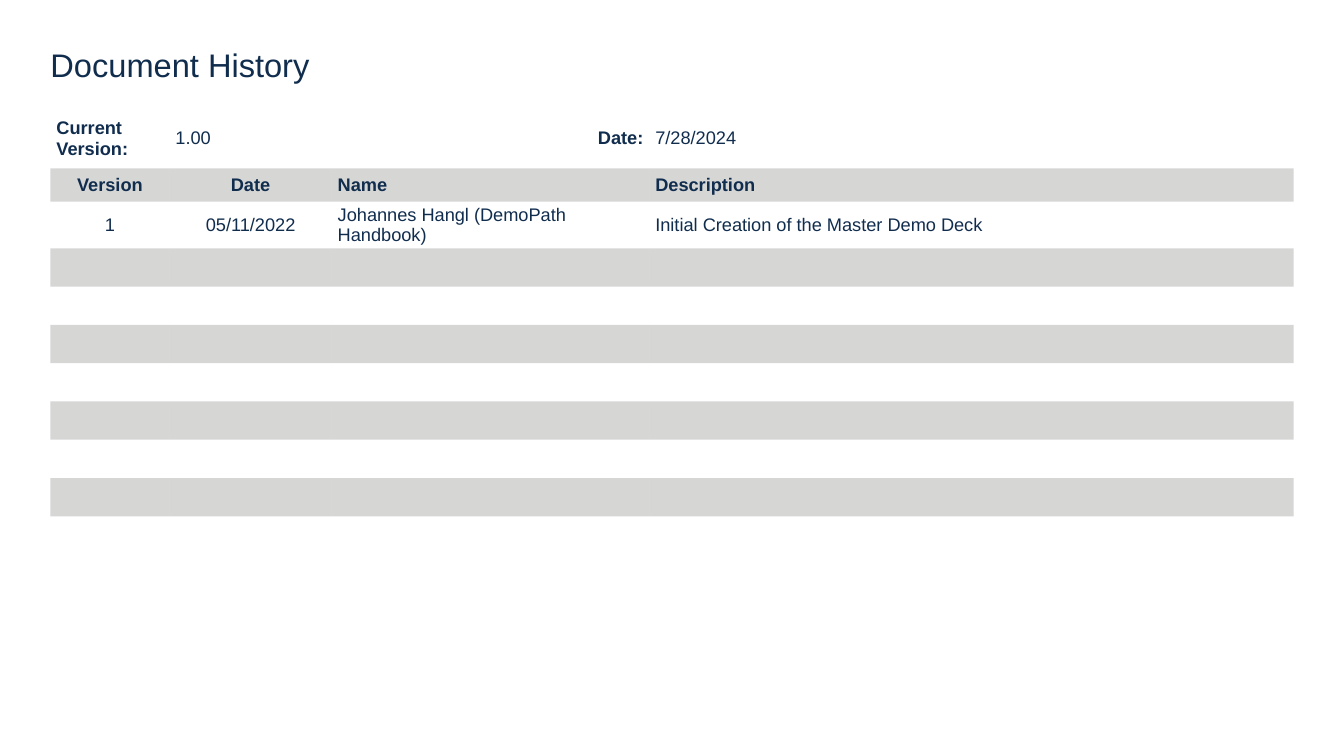
from lxml.etree import SubElement
from pptx import Presentation
from pptx.dml.color import RGBColor
from pptx.enum.text import MSO_ANCHOR, PP_ALIGN
from pptx.oxml.ns import qn
from pptx.util import Inches, Pt

COLORS = {"text": "112D4E", "band": "353231"}
FONT = "Arial"
NO_STYLE = "{2D5ABB26-0587-4C30-8999-92F81FD0307C}"
BAND_OPACITY = 20
COLUMN_WIDTHS = [1.18, 1.61, 3.15, 6.39]
ROW_HEIGHTS = [0.59, 0.33] + [0.38] * 10
BANDED_ROWS = range(1, 10, 2)
LEFT, CENTER, RIGHT = PP_ALIGN.LEFT, PP_ALIGN.CENTER, PP_ALIGN.RIGHT
HISTORY = [
    [("Current Version:", LEFT, True), ("1.00", LEFT, False),
     ("Date:", RIGHT, True), ("7/28/2024", LEFT, False)],
    [("Version", CENTER, True), ("Date", CENTER, True),
     ("Name", LEFT, True), ("Description", LEFT, True)],
    [("1", CENTER, False), ("05/11/2022", CENTER, False),
     ("Johannes Hangl (DemoPath Handbook)", LEFT, False),
     ("Initial Creation of the Master Demo Deck", LEFT, False)],
]


def add_run(p, text, size, bold=False):
    r = p.add_run()
    r.text = text
    r.font.name = FONT
    r.font.size = Pt(size)
    r.font.bold = bold
    r.font.color.rgb = RGBColor.from_string(COLORS["text"])


def add_title(slide, text, left, top, width, height):
    sp = slide.shapes.title
    sp.left, sp.top = Inches(left), Inches(top)
    sp.width, sp.height = Inches(width), Inches(height)
    tf = sp.text_frame
    tf.word_wrap = True
    tf.vertical_anchor = MSO_ANCHOR.MIDDLE
    tf.margin_left = tf.margin_right = tf.margin_top = 0
    tf.margin_bottom = Inches(0.5)
    p = tf.paragraphs[0]
    p.alignment = LEFT
    p.line_spacing = 0.9
    add_run(p, text, 23.3)


def fill_band(cell):
    cell.fill.solid()
    cell.fill.fore_color.rgb = RGBColor.from_string(COLORS["band"])
    color = cell._tc.tcPr.find(".//" + qn("a:srgbClr"))
    SubElement(color, qn("a:alpha")).set("val", str(BAND_OPACITY * 1000))


def format_cell(cell, banded):
    cell.vertical_anchor = MSO_ANCHOR.MIDDLE
    cell.margin_left = cell.margin_right = Inches(0.06)
    cell.margin_top = cell.margin_bottom = Inches(0.03)
    if banded:
        fill_band(cell)
    else:
        cell.fill.background()
    cell.text_frame.paragraphs[0].font.size = Pt(13)


def add_history(slide, left, top, width, height):
    frame = slide.shapes.add_table(
        len(ROW_HEIGHTS), len(COLUMN_WIDTHS),
        Inches(left), Inches(top), Inches(width), Inches(height))
    table = frame.table
    table.first_row = table.horz_banding = False
    table._tbl.tblPr.find(qn("a:tableStyleId")).text = NO_STYLE
    for column, share in zip(table.columns, COLUMN_WIDTHS):
        column.width = Inches(width * share / sum(COLUMN_WIDTHS))
    for i, (row, share) in enumerate(zip(table.rows, ROW_HEIGHTS)):
        row.height = Inches(height * share / sum(ROW_HEIGHTS))
        for cell in row.cells:
            format_cell(cell, i in BANDED_ROWS)
    for row, entries in zip(table.rows, HISTORY):
        for cell, (text, align, bold) in zip(row.cells, entries):
            p = cell.text_frame.paragraphs[0]
            p.alignment = align
            add_run(p, text, 13, bold)


def main():
    prs = Presentation()
    prs.slide_width, prs.slide_height = Inches(13.33), Inches(7.5)
    slide = prs.slides.add_slide(prs.slide_layouts.get_by_name("Title Only"))
    add_title(slide, "Document History", 0.5, 0.15, 12.33, 1.52)
    add_history(slide, 0.5, 1.08, 12.33, sum(ROW_HEIGHTS))
    prs.save("out.pptx")


if __name__ == "__main__":
    main()
